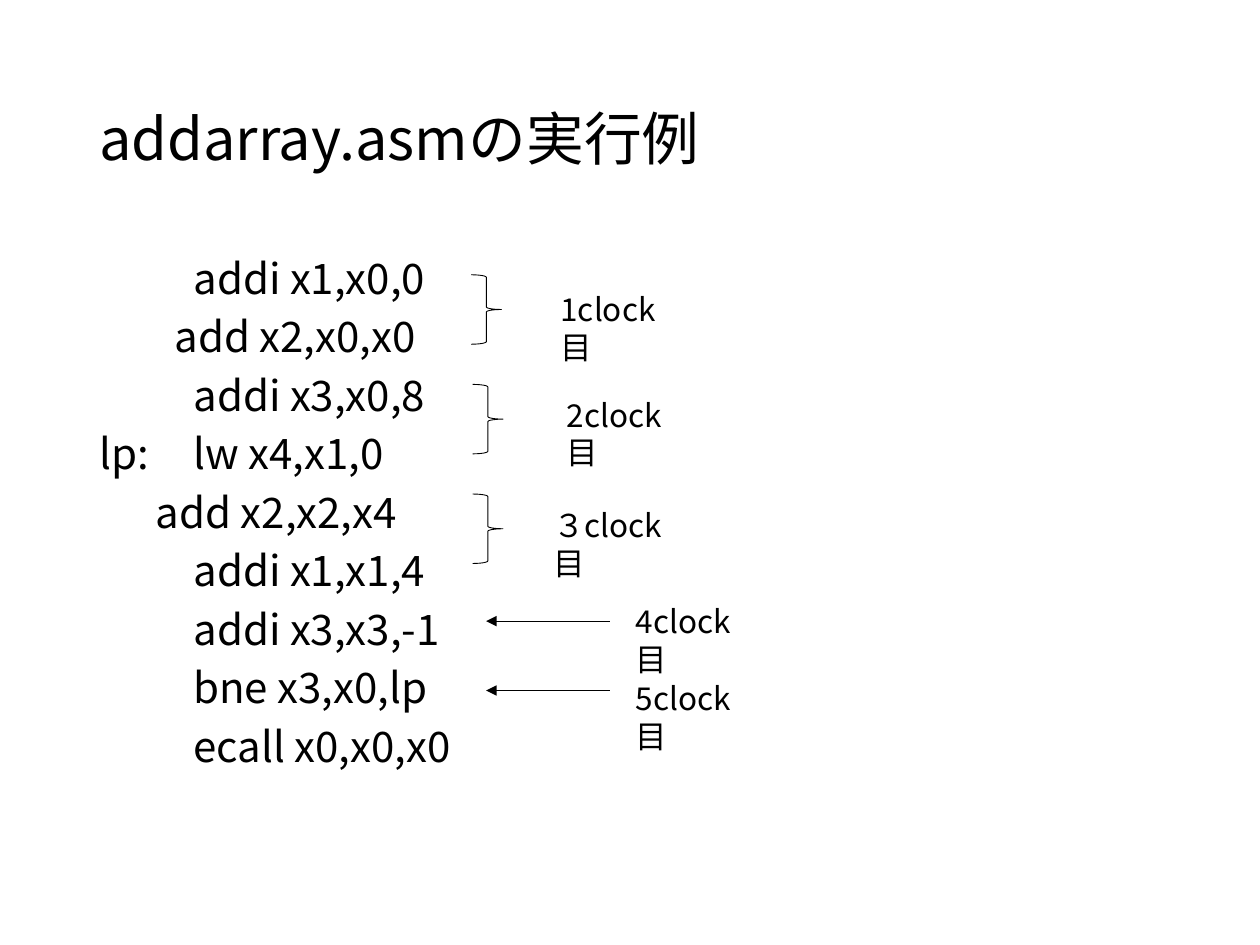
from lxml.etree import SubElement
from pptx import Presentation
from pptx.dml.color import RGBColor
from pptx.enum.shapes import MSO_CONNECTOR as Connector, MSO_SHAPE as Shape
from pptx.enum.text import MSO_ANCHOR as Anchor
from pptx.oxml.ns import qn
from pptx.util import Cm, Pt


def colour(code):
    return RGBColor.from_string(code)


def write(para, text, size, font, ink, leading=1.0, before=0, indent=0, hanging=0):
    para.line_spacing = leading
    para.space_before = Pt(before)
    props = para._p.get_or_add_pPr()
    props.set("marL", str(Cm(indent)))
    props.set("indent", str(-Cm(hanging)))
    span = para.add_run()
    span.text = text
    span.font.size = Pt(size)
    span.font.name = font
    span.font.color.rgb = colour(ink)
    SubElement(span._r.get_or_add_rPr(), qn("a:ea"), typeface=font)


class ClockPage:
    font = "Noto Sans CJK JP"
    ink = "000000"
    stroke = 0.5

    def __init__(self, deck):
        self.page = deck.slides.add_slide(deck.slide_layouts[6])

    def frame(self, left, top, width, height, anchor=Anchor.TOP):
        box = self.page.shapes.add_textbox(Cm(left), Cm(top), Cm(width), Cm(height))
        box.text_frame.word_wrap = True
        box.text_frame.vertical_anchor = anchor
        return box.text_frame

    def title(self, text):
        frame = self.frame(1.75, 1.02, 21.9, 3.68, Anchor.MIDDLE)
        write(frame.paragraphs[0], text, 33, self.font, self.ink, leading=0.9)

    def listing(self, lines):
        frame = self.frame(1.75, 5.08, 21.9, 12.09)
        for index, (text, indent, hanging) in enumerate(lines):
            para = frame.add_paragraph() if index else frame.paragraphs[0]
            write(para, text, 24, self.font, self.ink, leading=0.9, before=7.5,
                  indent=indent, hanging=hanging)

    def label(self, text, left, top, width=3.05):
        frame = self.frame(left, top, width, 1.02)
        frame.margin_right = Cm(0.5)
        write(frame.paragraphs[0], text, 18, self.font, self.ink)

    def brace(self, left, top):
        brace = self.page.shapes.add_shape(
            Shape.RIGHT_BRACE, Cm(left), Cm(top), Cm(0.61), Cm(1.4))
        brace.shadow.inherit = False
        brace.fill.background()
        brace.line.color.rgb = colour(self.ink)
        brace.line.width = Pt(self.stroke)

    def arrow(self, start, end, level):
        arrow = self.page.shapes.add_connector(
            Connector.STRAIGHT, Cm(start), Cm(level), Cm(end), Cm(level))
        arrow.line.color.rgb = colour(self.ink)
        arrow.line.width = Pt(self.stroke)
        SubElement(arrow.line._get_or_add_ln(), qn("a:tailEnd"), type="triangle")
        SubElement(arrow._element.spPr, qn("a:effectLst"))


def main():
    deck = Presentation()
    deck.slide_width, deck.slide_height = Cm(25.4), Cm(19.05)
    page = ClockPage(deck)
    page.title("addarray.asmの実行例")
    tab = 1.9
    page.listing([
        ("addi x1,x0,0", tab, 0),
        ("add x2,x0,x0", 1.52, 0),
        ("addi x3,x0,8", tab, 0),
        ("lp:\tlw x4,x1,0", tab, tab),
        ("add x2,x2,x4", 1.14, 0),
        ("addi x1,x1,4", tab, 0),
        ("addi x3,x3,-1", tab, 0),
        ("bne x3,x0,lp", tab, 0),
        ("ecall x0,x0,x0", tab, 0),
    ])
    for row, left in enumerate((9.5, 9.53, 9.53)):
        page.brace(left, 5.54 + row * 2.21)
    for level in (12.52, 13.92):
        page.arrow(12.29, 9.8, level)
    page.label("1clock目", 11.05, 5.72)
    page.label("2clock目", 11.18, 7.85)
    page.label("３clock目", 10.9, 10.08, width=3.33)
    page.label("4clock目", 12.57, 12.01)
    page.label("5clock目", 12.57, 13.56)
    deck.save("out.pptx")


if __name__ == "__main__":
    main()
